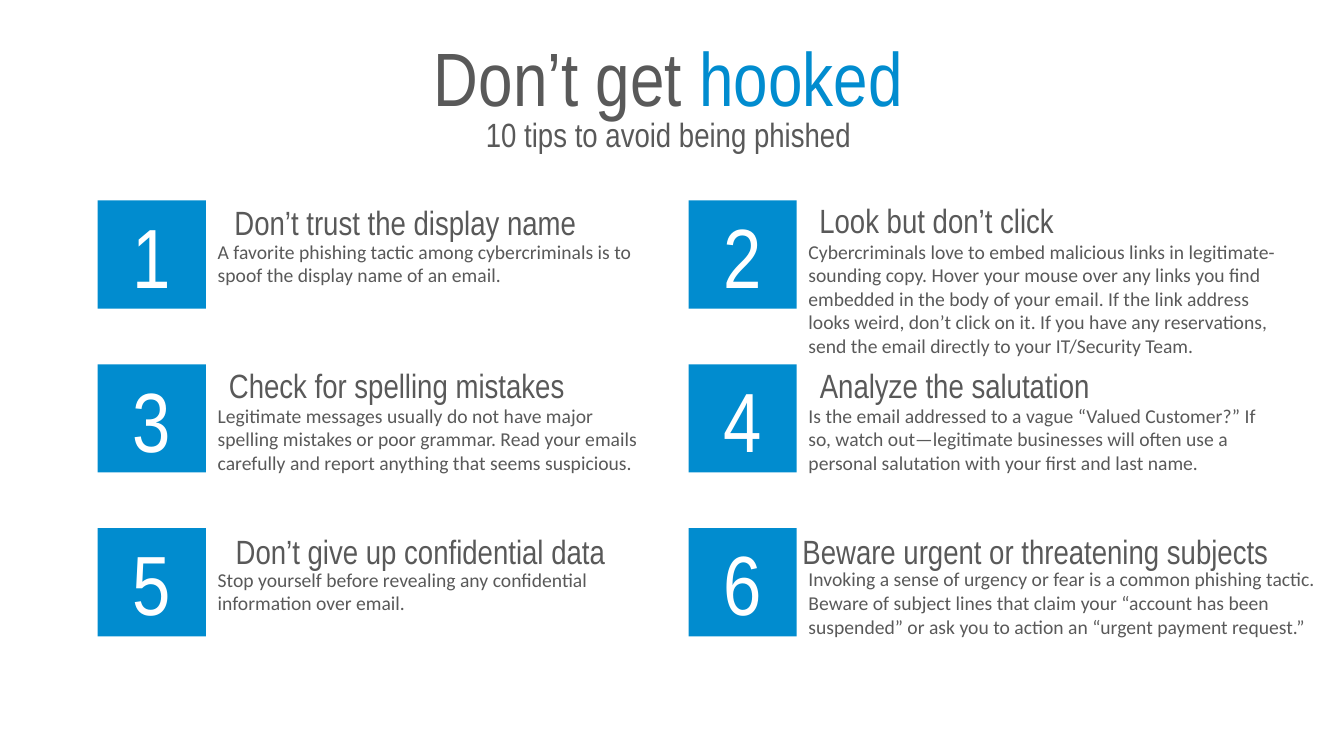
from dataclasses import dataclass

from pptx import Presentation
from pptx.dml.color import RGBColor
from pptx.enum.shapes import MSO_SHAPE as Shape
from pptx.enum.text import MSO_ANCHOR as Anchor, MSO_AUTO_SIZE as AutoSize, PP_ALIGN as Align
from pptx.util import Pt


@dataclass(frozen=True)
class Theme:
    blue: RGBColor = RGBColor.from_string("018CCF")
    grey: RGBColor = RGBColor.from_string("595959")
    white: RGBColor = RGBColor.from_string("FFFFFF")
    display_font: str = "Arial Narrow"
    body_font: str = "Calibri"
    number_size: int = 60
    title_size: int = 54
    heading_size: int = 24
    body_size: int = 14


@dataclass(frozen=True)
class Tip:
    """Heading offsets are measured from the top left corner of the number tile."""
    heading: str
    body: str
    body_lines: int
    body_width: float
    heading_dx: float
    heading_dy: float
    heading_width: float
    heading_height: float = 48.2
    heading_align: Align = Align.CENTER


TIPS = [
    Tip("Don’t trust the display name",
        "A favorite phishing tactic among cybercriminals is to spoof the display name of an email.",
        2, 334, 81.4, -15, 276.5),
    Tip("Look but don’t click",
        "Cybercriminals love to embed malicious links in legitimate-sounding copy. Hover your mouse "
        "over any links you find embedded in the body of your email. If the link address looks weird, "
        "don’t click on it. If you have any reservations, send the email directly to your IT/Security Team.",
        5, 376.5, 77.8, -16.4, 198.7),
    Tip("Check for spelling mistakes",
        "Legitimate messages usually do not have major spelling mistakes or poor grammar. Read your "
        "emails carefully and report anything that seems suspicious.",
        3, 334, 77.8, -15.3, 271.4),
    Tip("Analyze the salutation",
        "Is the email addressed to a vague “Valued Customer?” If so, watch out—legitimate businesses "
        "will often use a personal salutation with your first and last name.",
        3, 361.5, 77.8, -15.3, 224.6),
    Tip("Don’t give up confidential data",
        "Stop yourself before revealing any confidential information over email.",
        2, 334, 82.1, -13.6, 296.6, 52.6),
    Tip("Beware urgent or threatening subjects",
        "Invoking a sense of urgency or fear is a common phishing tactic. Beware of subject lines that "
        "claim your “account has been suspended” or ask you to action an “urgent payment request.”",
        3, 396.7, 67, -13.6, 400, 52.6, Align.LEFT),
]

COLUMNS = 2
GRID_LEFT, GRID_TOP = 69.8, 143.2
COLUMN_PITCH, ROW_PITCH = 422, 117
TILE_SIZE = 77.3
BODY_DX, BODY_DY = 71.3, 20.9
BODY_LINE_HEIGHT = 17.1
INSET_X, INSET_Y = 14.4, 7.2


class SlideBuilder:
    def __init__(self, slide, theme):
        self.slide = slide
        self.theme = theme

    def format_paragraph(self, paragraph, size, color, font_name=None, align=Align.LEFT):
        paragraph.alignment = align
        paragraph.font.size = Pt(size)
        paragraph.font.name = font_name or self.theme.display_font
        paragraph.font.color.rgb = color

    def title(self, plain, accent):
        title = self.slide.shapes.title
        title.left, title.top, title.width, title.height = Pt(37.4), Pt(30.2), Pt(880), Pt(48.2)
        frame = title.text_frame
        frame.auto_size = AutoSize.NONE
        frame.vertical_anchor = Anchor.MIDDLE
        paragraph = frame.paragraphs[0]
        self.format_paragraph(paragraph, self.theme.title_size, self.theme.grey, align=Align.CENTER)
        paragraph.add_run().text = plain
        accent_run = paragraph.add_run()
        accent_run.text = accent
        accent_run.font.color.rgb = self.theme.blue

    def text(self, shapes, text, left, top, width, height):
        text_box = shapes.add_textbox(Pt(left), Pt(top), Pt(width), Pt(height))
        frame = text_box.text_frame
        frame.word_wrap = True
        frame.text = text
        return frame

    def subtitle(self, text):
        frame = self.text(self.slide.shapes, text, 300.2, 77.8, 354.2, 30.2)
        self.format_paragraph(frame.paragraphs[0], self.theme.heading_size, self.theme.grey,
                              align=Align.CENTER)

    def padded_text(self, shapes, text, left, top, width, height):
        frame = self.text(shapes, text, left, top, width, height)
        frame.auto_size = AutoSize.SHAPE_TO_FIT_TEXT
        frame.margin_left = frame.margin_right = Pt(INSET_X)
        frame.margin_top = frame.margin_bottom = Pt(INSET_Y)
        return frame

    def number_tile(self, shapes, number, left, top):
        tile = shapes.add_shape(Shape.RECTANGLE, Pt(left), Pt(top), Pt(TILE_SIZE), Pt(TILE_SIZE))
        tile.shadow.inherit = False
        tile.fill.solid()
        tile.fill.fore_color.rgb = self.theme.blue
        tile.line.fill.background()
        frame = tile.text_frame
        frame.margin_left = frame.margin_right = frame.margin_top = frame.margin_bottom = 0
        frame.vertical_anchor = Anchor.MIDDLE
        frame.text = str(number)
        self.format_paragraph(frame.paragraphs[0], self.theme.number_size, self.theme.white,
                              align=Align.CENTER)

    def tip(self, number, tip, left, top):
        shapes = self.slide.shapes.add_group_shape().shapes
        body = self.padded_text(shapes, tip.body, left + BODY_DX, top + BODY_DY, tip.body_width,
                                2 * INSET_Y + tip.body_lines * BODY_LINE_HEIGHT)
        self.format_paragraph(body.paragraphs[0], self.theme.body_size, self.theme.grey,
                              self.theme.body_font)
        heading = self.padded_text(shapes, tip.heading, left + tip.heading_dx, top + tip.heading_dy,
                                   tip.heading_width, tip.heading_height)
        heading.word_wrap = tip.heading_align == Align.LEFT
        paragraph = heading.paragraphs[0]
        paragraph.line_spacing = 1.3
        self.format_paragraph(paragraph, self.theme.heading_size, self.theme.grey,
                              align=tip.heading_align)
        self.number_tile(shapes, number, left, top)


def main():
    presentation = Presentation()
    presentation.slide_width, presentation.slide_height = Pt(960), Pt(540)
    title_only = presentation.slide_layouts.get_by_name("Title Only")
    builder = SlideBuilder(presentation.slides.add_slide(title_only), Theme())
    builder.title("Don’t get ", "hooked")
    builder.subtitle("10 tips to avoid being phished")
    for index, tip in enumerate(TIPS):
        row, column = divmod(index, COLUMNS)
        builder.tip(index + 1, tip, GRID_LEFT + column * COLUMN_PITCH, GRID_TOP + row * ROW_PITCH)
    presentation.save("out.pptx")


if __name__ == "__main__":
    main()
